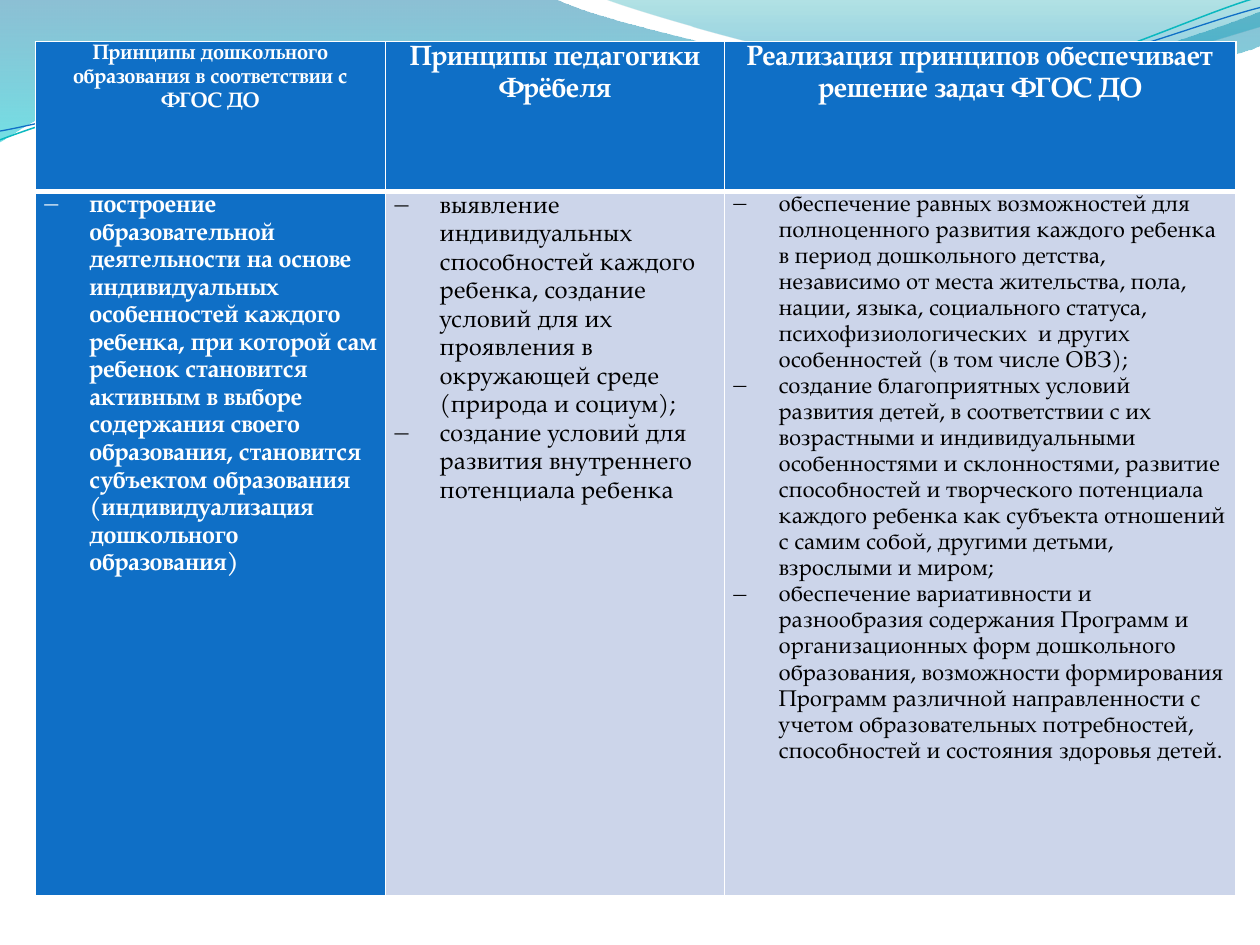
import math
from dataclasses import dataclass

from lxml import etree
from pptx import Presentation
from pptx import util as u
from pptx.dml.color import RGBColor
from pptx.enum import text
from pptx.oxml.ns import qn


@dataclass(frozen=True)
class Theme:
    """Colours, font and type sizes of the slide."""
    font: str = "TeX Gyre Pagella"
    blue: str = "0F6FC6"
    teal: str = "0AB8BF"
    pale: str = "CCD5EA"
    white: str = "FFFFFF"
    black: str = "000000"
    left_wave: tuple = ((0, "0074A1", 45), (1, "00C6CF", 55))
    right_wave: tuple = ((0, "00A1A9", 30), (0.8, "008BBF", 45))
    head_sizes: tuple = (12, 16, 16)
    body_sizes: tuple = (14, 14, 13)
    spacing: float = 1.15


THEME = Theme()
TILT = -2.7

LEFT_WAVE = [
    (0, 0), (4.4, -0.01),
    (4.76, 0.17, 6.64, 0.63, 7.58, 0.63), (8.53, 0.63, 9.58, 0.26, 10, 0.09),
    (10.01, 0.36),
    (9.83, 0.44, 8.7, 0.76, 7.46, 0.75), (6.22, 0.75, 3.82, 0.28, 2.57, 0.34),
    (1.29, 0.36, 0.46, 0.83, -0.01, 1.13), (0, 0),
]
RIGHT_WAVE = [
    (4.79, -0.01),
    (5.09, 0.11, 6.82, 0.62, 7.69, 0.65), (8.56, 0.69, 9.61, 0.32, 10, 0.21),
    (10, 0), (4.79, -0.01),
]
TEAL_LINE = [
    (0, 1.11),
    (0.48, 0.93, 1.58, 0.57, 2.77, 0.52), (3.95, 0.47, 5.93, 0.89, 7.13, 0.8),
    (8.33, 0.71, 9.38, 0.15, 9.98, -0.02),
]
BLUE_LINE = [
    (0, 1.04),
    (0.47, 0.96, 1.64, 0.61, 2.83, 0.56), (4.03, 0.51, 5.97, 0.84, 7.17, 0.75),
    (8.36, 0.67, 9.41, 0.21, 10, 0.06),
]

HEADINGS = [
    "Принципы дошкольного образования в соответствии с ФГОС ДО",
    "Принципы педагогики Фрёбеля",
    "Реализация принципов обеспечивает решение задач ФГОС ДО",
]
PRINCIPLES = [
    ["построение образовательной деятельности на основе индивидуальных особенностей "
     "каждого ребенка, при которой сам ребенок становится активным в выборе содержания "
     "своего образования, становится субъектом образования (индивидуализация "
     "дошкольного образования)"],
    ["выявление индивидуальных способностей каждого ребенка, создание условий для их "
     "проявления в окружающей среде (природа и социум);",
     "создание условий для развития внутреннего потенциала ребенка"],
    ["обеспечение равных возможностей для полноценного развития каждого ребенка в период "
     "дошкольного детства, независимо от места жительства, пола, нации, языка, социального "
     "статуса, психофизиологических  и других особенностей (в том числе ОВЗ);",
     "создание благоприятных условий развития детей, в соответствии с их возрастными и "
     "индивидуальными особенностями и склонностями, развитие способностей и творческого "
     "потенциала каждого ребенка как субъекта отношений с самим собой, другими детьми, "
     "взрослыми и миром;",
     "обеспечение вариативности и разнообразия содержания Программ и организационных форм "
     "дошкольного образования, возможности формирования Программ различной направленности "
     "с учетом образовательных потребностей, способностей и состояния здоровья детей."],
]


def rgb(value):
    """Return a colour from its hex value."""
    return RGBColor.from_string(value)


def turn(point, degrees, center=(4.99, 0.58)):
    """Turn a point clockwise about a center."""
    a = math.radians(degrees)
    dx, dy = point[0] - center[0], point[1] - center[1]
    return (center[0] + dx * math.cos(a) - dy * math.sin(a),
            center[1] + dx * math.sin(a) + dy * math.cos(a))


def add_path(slide, parts, left, top, close, tilt=0):
    """Draw points and cubic curves as one freeform whose origin is at left, top."""
    points = [turn(part[i:i + 2], -tilt) for part in parts for i in range(0, len(part), 2)]
    points = [(u.Inches(x), u.Inches(y)) for x, y in points]
    builder = slide.shapes.build_freeform(*points[0], scale=1)
    builder.add_line_segments(points[1:], close=close)
    sp = builder.convert_to_shape(left, top)
    sp.rotation = tilt % 360
    sp.shadow.inherit = False
    segments = iter(list(sp.element.iter(qn("a:lnTo"))))
    for part in parts[1:]:
        first = next(segments)
        if len(part) == 6:
            first.tag = qn("a:cubicBezTo")
            for _ in range(2):
                extra = next(segments)
                first.append(extra[0])
                extra.getparent().remove(extra)
    return sp


def add_waves(slide, left, top):
    """Draw the translucent waves and the two thin lines along the top."""
    for path, stops in ((LEFT_WAVE, THEME.left_wave), (RIGHT_WAVE, THEME.right_wave)):
        sp = add_path(slide, path, left, top, True)
        sp.line.fill.background()
        sp.fill.gradient()
        sp.fill.gradient_angle = 270
        for stop, (position, color, _) in zip(sp.fill.gradient_stops, stops):
            stop.position = position
            stop.color.rgb = rgb(color)
        for clr, (_, _, opacity) in zip(sp.element.iter(qn("a:srgbClr")), stops):
            etree.SubElement(clr, qn("a:alpha"), val=str(opacity * 1000))
    for path, color, width in ((TEAL_LINE, THEME.teal, 0.85), (BLUE_LINE, THEME.blue, 0.75)):
        sp = add_path(slide, path, left, top, False, TILT)
        sp.fill.background()
        sp.line.color.rgb = rgb(color)
        sp.line.width = u.Pt(width)


def set_borders(cell, top, bottom):
    """Give a cell white borders, with top and bottom widths in points."""
    tc_pr = cell._tc.get_or_add_tcPr()
    for i, (side, width) in enumerate((("L", 1), ("R", 1), ("T", top), ("B", bottom))):
        ln = etree.Element(qn(f"a:ln{side}"), w=str(u.Pt(width)))
        fill = etree.SubElement(ln, qn("a:solidFill"))
        etree.SubElement(fill, qn("a:srgbClr"), val=THEME.white)
        tc_pr.insert(i, ln)


def add_dash(p):
    """Give a paragraph a hanging dash."""
    p_pr = p._p.get_or_add_pPr()
    indent = u.Inches(0.38)
    p_pr.set("marL", str(indent))
    p_pr.set("indent", str(-indent))
    etree.SubElement(p_pr, qn("a:buChar"), char="−")


def fill_cell(cell, items, size, strong, heading):
    """Write the paragraphs of one cell and style it."""
    cell.margin_left = cell.margin_right = u.Inches(0.05)
    cell.margin_top = cell.margin_bottom = 0
    cell.fill.solid()
    cell.fill.fore_color.rgb = rgb(THEME.blue if strong else THEME.pale)
    set_borders(cell, 1 if heading else 3, 3 if heading else 1)
    tf = cell.text_frame
    for i, item in enumerate(items):
        p = tf.add_paragraph() if i else tf.paragraphs[0]
        p.add_run().text = item
        if heading:
            p.alignment = text.PP_ALIGN.CENTER
        else:
            add_dash(p)
        p.line_spacing = THEME.spacing
        p.font.name = THEME.font
        p.font.size = u.Pt(size)
        p.font.bold = strong
        p.font.color.rgb = rgb(THEME.white if strong else THEME.black)


def add_principles(slide, left, top, width, height):
    """Build the table of principles in the given box."""
    table = slide.shapes.add_table(2, 3, left, top, width, height).table
    table.horz_banding = False
    table.first_col = True
    for column, size in zip(table.columns, (2.78, 2.69, 4.06)):
        column.width = u.Inches(size)
    table.rows[0].height = u.Inches(1.19)
    table.rows[1].height = height - u.Inches(1.19)
    for c, (heading, items) in enumerate(zip(HEADINGS, PRINCIPLES)):
        fill_cell(table.cell(0, c), [heading], THEME.head_sizes[c], True, True)
        fill_cell(table.cell(1, c), items, THEME.body_sizes[c], c == 0, False)


def main():
    """Build and save the slide."""
    prs = Presentation()
    prs.slide_width, prs.slide_height = u.Inches(10), u.Inches(7.5)
    slide = prs.slides.add_slide(prs.slide_layouts[6])
    add_waves(slide, 0, 0)
    add_principles(slide, u.Inches(0.28), u.Inches(0.33), u.Inches(9.53), u.Inches(6.78))
    prs.save("out.pptx")


if __name__ == "__main__":
    main()
